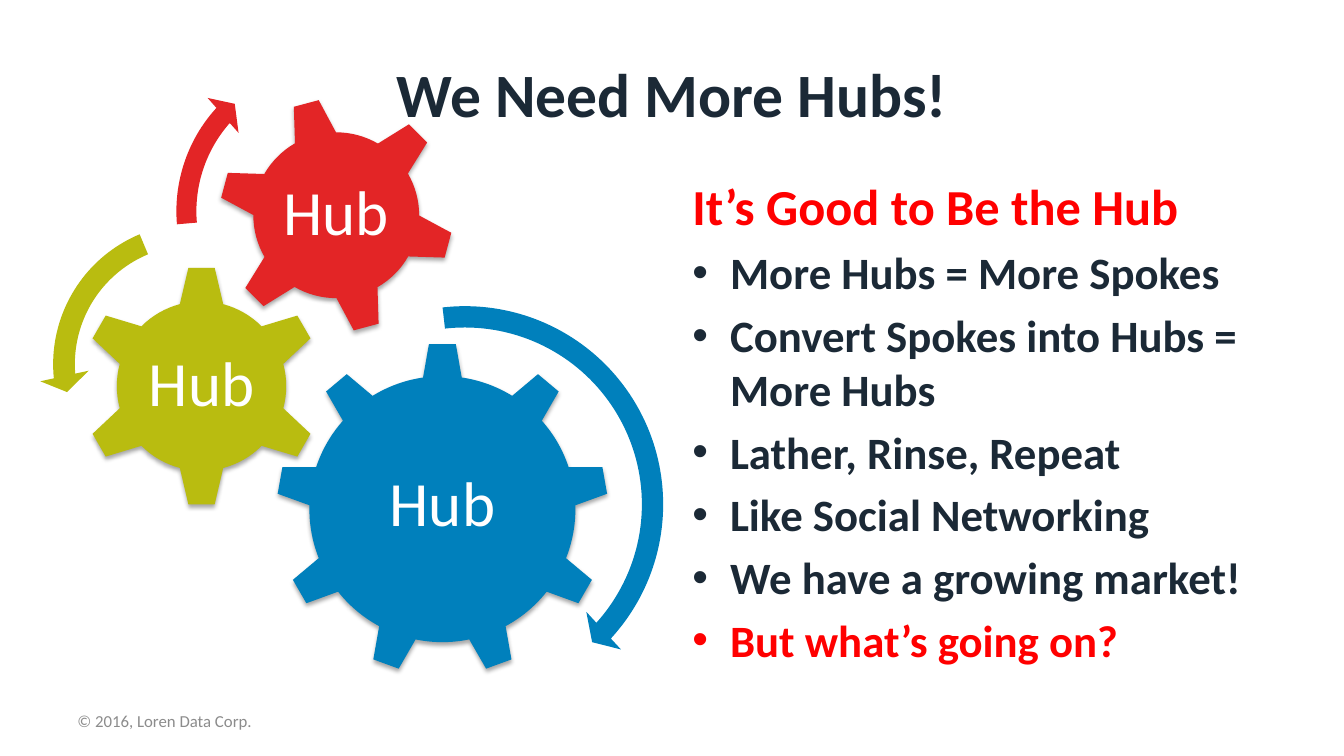
from lxml import etree
from pptx import Presentation
from pptx.dml.color import RGBColor
from pptx.enum.shapes import MSO_SHAPE
from pptx.enum.text import MSO_ANCHOR, PP_ALIGN
from pptx.oxml.ns import qn
from pptx.util import Cm, Pt

GEAR_9, GEAR_6 = MSO_SHAPE.GEAR_9, MSO_SHAPE.GEAR_6
ARROW, LEFT_ARROW = MSO_SHAPE.CIRCULAR_ARROW, MSO_SHAPE.LEFT_CIRCULAR_ARROW
TOP, MIDDLE, BOTTOM = MSO_ANCHOR.TOP, MSO_ANCHOR.MIDDLE, MSO_ANCHOR.BOTTOM
LEFT, CENTER = PP_ALIGN.LEFT, PP_ALIGN.CENTER

NAVY = RGBColor(0x1B, 0x29, 0x36)
BLUE = RGBColor(0x00, 0x80, 0xBC)
GREEN = RGBColor(0xB9, 0xBC, 0x10)
CRIMSON = RGBColor(0xE3, 0x25, 0x26)
RED = RGBColor(0xFF, 0x00, 0x00)
GRAY = RGBColor(0x8C, 0x8C, 0x8C)
WHITE = RGBColor(0xFF, 0xFF, 0xFF)

# Content: lengths in centimetres
TITLE = "We Need More Hubs!"
HEADING = "It’s Good to Be the Hub"
BULLETS = [
    ("More Hubs = More Spokes", NAVY),
    ("Convert Spokes into Hubs =\vMore Hubs", NAVY),
    ("Lather, Rinse, Repeat", NAVY),
    ("Like Social Networking", NAVY),
    ("We have a growing market!", NAVY),
    ("But what’s going on?", RED),
]
FOOTER = "© 2016, Loren Data Corp."
HUB = "Hub"

# kind, left, top, size, rotation, colour, label width, label height, label lift
GEARS = [
    (GEAR_9, 6.96, 8.64, 8.38, 0, BLUE, 5, 4.32, 0.08),
    (GEAR_6, 2.03, 6.68, 6.1, 0, GREEN, 3.02, 3, 0),
    (GEAR_6, 5.49, 2.44, 5.97, 345, CRIMSON, 3.35, 3.35, 0),
]
# kind, left, top, size, colour, adjustments
ARROWS = [
    (ARROW, 6.35, 7.34, 10.74, BLUE, (0.05, 2.99, 25.4, 158.1, 0.06)),
    (LEFT_ARROW, 0.99, 5.28, 7.8, GREEN, (0.07, 4.3, 104.89, 148.38, 0.08)),
    (ARROW, 4.11, 1.12, 8.41, CRIMSON, (0.06, 3.94, 133.14, 105.08, 0.07)),
]
TEXT_LEFT, TEXT_WIDTH = 17.2, 14.96
INDENT = Cm(0.95)
SHADOW = {"blurRad": Pt(3.1), "dist": Pt(1.8), "dir": 90 * 60000,
          "algn": "ctr", "rotWithShape": 0}

presentation = Presentation()
presentation.slide_width, presentation.slide_height = Cm(33.87), Cm(19.05)
slide = presentation.slides.add_slide(presentation.slide_layouts[6])


def add_text(box, lines, size, bold=False, align=LEFT, anchor=MIDDLE,
             bulleted=False, inset=None, spacing=None):
    """Add a text box; lines holds (text, colour) pairs."""
    frame = slide.shapes.add_textbox(*map(Cm, box)).text_frame
    frame.word_wrap = True
    frame.vertical_anchor = anchor
    if inset is not None:
        for side in ("left", "top", "right", "bottom"):
            setattr(frame, f"margin_{side}", Cm(inset))
    for index, (text, color) in enumerate(lines):
        paragraph = frame.paragraphs[0] if index == 0 else frame.add_paragraph()
        paragraph.text = text
        paragraph.alignment = align
        paragraph.line_spacing = spacing
        paragraph.space_before = Pt(size * 0.2 if index else 0)
        if bulleted:
            properties = paragraph._p.get_or_add_pPr()
            properties.set("marL", str(INDENT))
            properties.set("indent", str(-INDENT))
            etree.SubElement(properties, qn("a:buFont"), typeface="Arial")
            etree.SubElement(properties, qn("a:buChar"), char="•")
        formats = {"name": "Calibri", "size": Pt(size), "bold": bold}
        for run in paragraph.runs:
            for name, value in formats.items():
                setattr(run.font, name, value)
            run.font.color.rgb = color


def add_part(kind, left, top, size, color):
    """Add a square, borderless shape without a shadow."""
    shape = slide.shapes.add_shape(kind, Cm(left), Cm(top), Cm(size), Cm(size))
    shape.shadow.inherit = False
    shape.fill.solid()
    shape.fill.fore_color.rgb = color
    shape.line.fill.background()
    return shape


def add_soft_shadow(shape):
    effects = shape._element.spPr.find(qn("a:effectLst"))
    outer = etree.SubElement(effects, qn("a:outerShdw"),
                             {name: str(value) for name, value in SHADOW.items()})
    color = etree.SubElement(outer, qn("a:srgbClr"), val="000000")
    etree.SubElement(color, qn("a:alpha"), val="35000")


# Title
add_text((1.7, 0.76, 30.48, 3.18), [(TITLE, NAVY)], 44, bold=True, align=CENTER)

# Gears with centred labels
for kind, left, top, size, rotation, color, width, height, lift in GEARS:
    gear = add_part(kind, left, top, size, color)
    gear.rotation = rotation
    add_soft_shadow(gear)
    label = (left + (size - width) / 2, top + (size - height) / 2 - lift, width, height)
    add_text(label, [(HUB, WHITE)], 45, align=CENTER, inset=0.15, spacing=0.9)

# Rotation arrows
for kind, left, top, size, color, adjustments in ARROWS:
    arrow = add_part(kind, left, top, size, color)
    for index, value in enumerate(adjustments):
        arrow.adjustments[index] = value

# Heading, bullets and footer
add_text((TEXT_LEFT, 4.27, TEXT_WIDTH, 1.78), [(HEADING, RED)], 36,
         bold=True, anchor=BOTTOM)
add_text((TEXT_LEFT, 6.05, TEXT_WIDTH, 10.97), BULLETS, 32,
         bold=True, anchor=TOP, bulleted=True)
add_text((1.7, 17.65, 7.9, 1.02), [(FOOTER, GRAY)], 12)

presentation.save("out.pptx")
